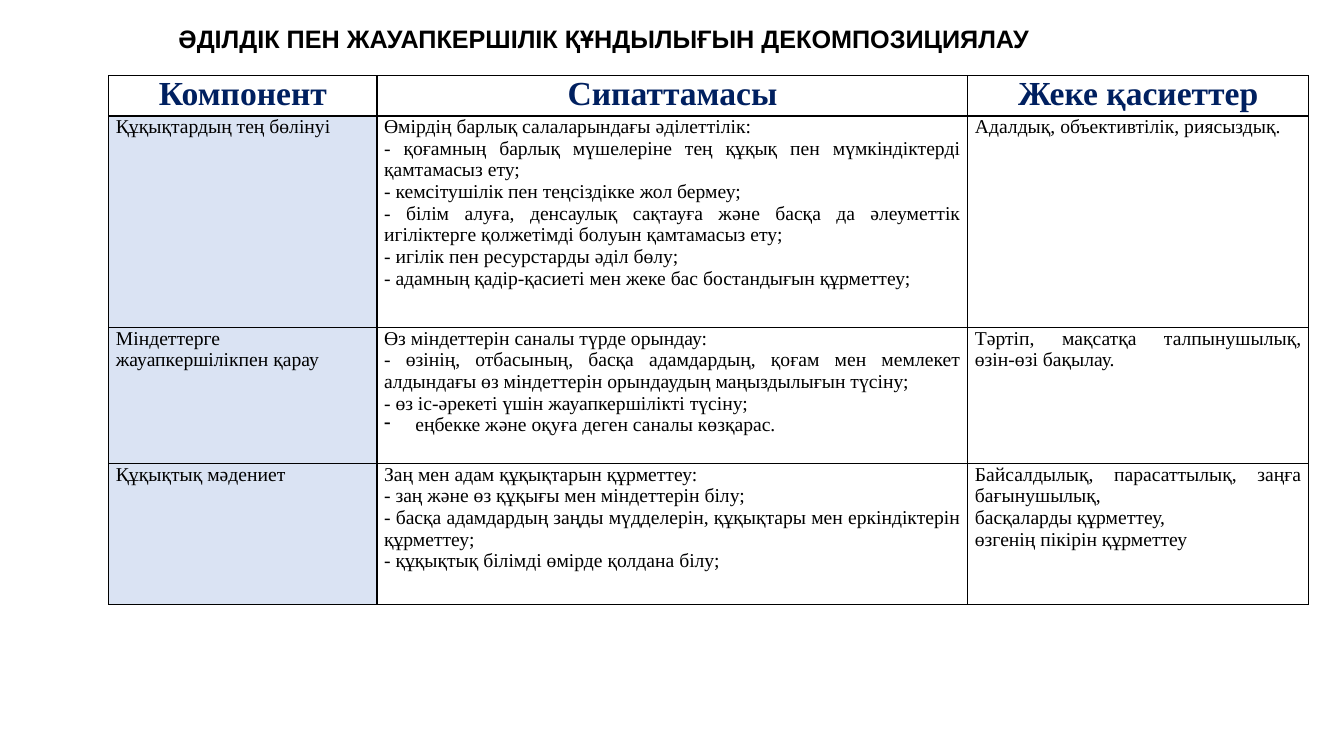
from lxml import etree
from pptx import Presentation
from pptx.dml.color import RGBColor
from pptx.enum.text import MSO_ANCHOR, MSO_AUTO_SIZE, PP_ALIGN
from pptx.oxml.ns import qn
from pptx.util import Inches, Pt

TOP = MSO_ANCHOR.TOP
NO_AUTOFIT = MSO_AUTO_SIZE.NONE
LEFT, CENTER, JUSTIFY = PP_ALIGN.LEFT, PP_ALIGN.CENTER, PP_ALIGN.JUSTIFY

TITLE = "ӘДІЛДІК ПЕН ЖАУАПКЕРШІЛІК ҚҰНДЫЛЫҒЫН ДЕКОМПОЗИЦИЯЛАУ"
HEADERS = ["Компонент", "Сипаттамасы", "Жеке қасиеттер"]
BULLETED = "еңбекке және оқуға деген саналы көзқарас."
COMPONENTS = [
    (
        ["Құқықтардың тең бөлінуі"],
        [
            "Өмірдің барлық салаларындағы әділеттілік:",
            "- қоғамның барлық мүшелеріне тең құқық пен мүмкіндіктерді қамтамасыз ету;",
            "- кемсітушілік пен теңсіздікке жол бермеу;",
            "- білім алуға, денсаулық сақтауға және басқа да әлеуметтік игіліктерге қолжетімді болуын қамтамасыз ету;",
            "- игілік пен ресурстарды әділ бөлу;",
            "- адамның қадір-қасиеті мен жеке бас бостандығын құрметтеу;",
        ],
        ["Адалдық, объективтілік, риясыздық."],
    ),
    (
        ["Міндеттерге жауапкершілікпен қарау"],
        [
            "Өз міндеттерін саналы түрде орындау:",
            "- өзінің, отбасының, басқа адамдардың, қоғам мен мемлекет алдындағы өз міндеттерін орындаудың маңыздылығын түсіну;",
            "- өз іс-әрекеті үшін жауапкершілікті түсіну;",
            BULLETED,
        ],
        ["Тәртіп, мақсатқа талпынушылық, өзін-өзі бақылау."],
    ),
    (
        ["Құқықтық мәдениет"],
        [
            "Заң мен адам құқықтарын құрметтеу:",
            "- заң және өз құқығы мен міндеттерін білу;",
            "- басқа адамдардың заңды мүдделерін, құқықтары мен еркіндіктерін құрметтеу;",
            "- құқықтық білімді өмірде қолдана білу;",
        ],
        [
            "Байсалдылық, парасаттылық, заңға бағынушылық,",
            "басқаларды құрметтеу,",
            "өзгенің пікірін құрметтеу",
        ],
    ),
]
COLUMN_WIDTHS = [2.66, 5.86, 3.38]
ROW_HEIGHTS = [0.4, 2.1, 1.35, 1.4]
BLACK, NAVY, PALE_BLUE = "000000", "002060", "DAE3F3"


def color(value):
    return RGBColor.from_string(value)


def format_paragraph(paragraph, font_name, size, text_color, bold, alignment):
    paragraph.alignment = alignment
    for run in paragraph.runs:
        font = run.font
        font.name, font.size, font.bold = font_name, Pt(size), bold
        font.color.rgb = color(text_color)


def add_dash_bullet(paragraph):
    properties = paragraph._p.get_or_add_pPr()
    properties.set("marL", str(Inches(0.31)))
    properties.set("indent", str(Inches(-0.31)))
    etree.SubElement(properties, qn("a:buChar")).set("char", "-")


def set_borders(cell):
    properties = cell._tc.get_or_add_tcPr()
    for position, side in enumerate(["a:lnL", "a:lnR", "a:lnT", "a:lnB"]):
        line = etree.Element(qn(side), w=str(Pt(1)))
        fill = etree.SubElement(line, qn("a:solidFill"))
        etree.SubElement(fill, qn("a:srgbClr")).set("val", BLACK)
        properties.insert(position, line)


def fill_cell(cell, lines, is_header, is_component):
    cell.margin_left = cell.margin_right = Inches(0.07)
    cell.margin_top = cell.margin_bottom = 0
    cell.vertical_anchor = TOP
    if is_component:
        cell.fill.solid()
        cell.fill.fore_color.rgb = color(PALE_BLUE)
    else:
        cell.fill.background()
    set_borders(cell)
    cell.text_frame.text = "\n".join(lines)
    for paragraph in cell.text_frame.paragraphs:
        if is_header:
            format_paragraph(paragraph, "Times New Roman", 24, NAVY, True, CENTER)
        else:
            format_paragraph(paragraph, "Times New Roman", 14, BLACK, False, JUSTIFY)
        if paragraph.text == BULLETED:
            add_dash_bullet(paragraph)


def add_title(slide):
    title = slide.shapes.title
    title.left, title.top = Inches(1.67), Inches(0.18)
    title.width, title.height = Inches(9.48), Inches(0.4)
    frame = title.text_frame
    frame.text = TITLE
    frame.word_wrap = True
    frame.auto_size = NO_AUTOFIT
    frame.vertical_anchor = TOP
    format_paragraph(frame.paragraphs[0], "Arial", 18, BLACK, True, LEFT)


def add_components_table(slide):
    rows = [[[header] for header in HEADERS], *COMPONENTS]
    table = slide.shapes.add_table(
        len(rows), len(HEADERS), Inches(1.08), Inches(0.75),
        Inches(sum(COLUMN_WIDTHS)), Inches(sum(ROW_HEIGHTS)),
    ).table
    table.first_row = table.horz_banding = False
    for column, width in zip(table.columns, COLUMN_WIDTHS):
        column.width = Inches(width)
    for row, height in zip(table.rows, ROW_HEIGHTS):
        row.height = Inches(height)
    for row_index, row in enumerate(rows):
        for column_index, lines in enumerate(row):
            is_header = row_index == 0
            is_component = column_index == 0 and not is_header
            fill_cell(table.cell(row_index, column_index), lines, is_header, is_component)


def main():
    presentation = Presentation()
    presentation.slide_width, presentation.slide_height = Inches(13.33), Inches(7.5)
    slide = presentation.slides.add_slide(presentation.slide_layouts[5])
    add_title(slide)
    add_components_table(slide)
    presentation.save("out.pptx")


if __name__ == "__main__":
    main()
